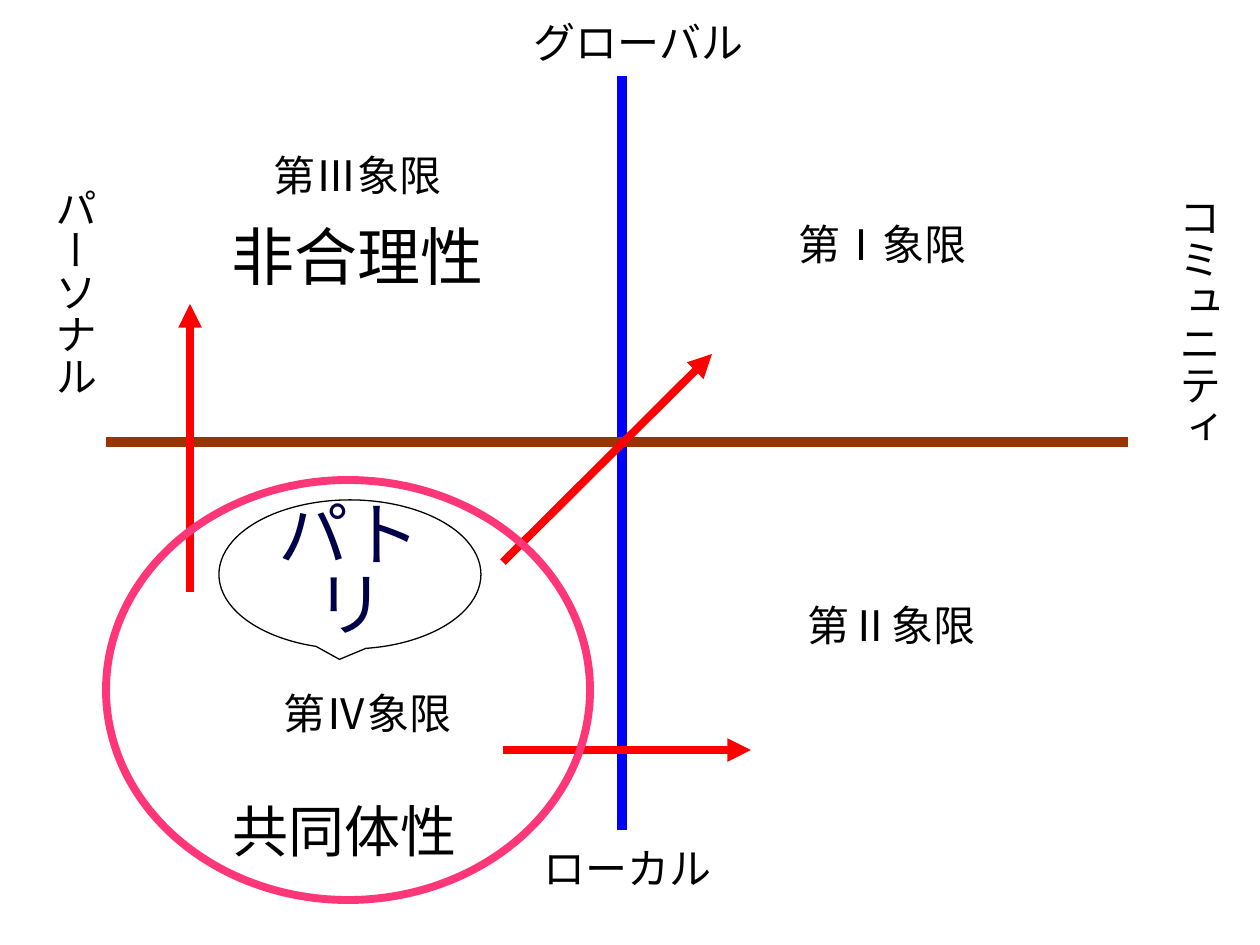
from lxml.etree import SubElement
from pptx import Presentation
from pptx.dml.color import RGBColor
from pptx.enum.shapes import MSO_CONNECTOR as Connector, MSO_SHAPE as Shape
from pptx.enum.text import MSO_ANCHOR as Anchor, PP_ALIGN as Align
from pptx.oxml.ns import qn
from pptx.util import Emu, Pt

FONT = "Noto Sans CJK JP"


def px(length):
    return Emu(round(length * 914400 / 126))


def color(hex_code):
    return RGBColor.from_string(hex_code)


def write(paragraph, text, size=24, ink="000000", align=Align.CENTER, spacing=None, before=None):
    paragraph.alignment = align
    if spacing:
        paragraph.line_spacing = spacing
    if before:
        paragraph.space_before = Pt(before)
    run = paragraph.add_run()
    run.text = text
    run.font.size = Pt(size)
    run.font.name = FONT
    run.font.color.rgb = color(ink)
    properties = run.font._element
    SubElement(properties, qn("a:ea")).set("typeface", FONT)


class Diagram:
    def __init__(self, slide):
        self.shapes = slide.shapes

    def line(self, start, end, ink, width, arrow=False):
        connector = self.shapes.add_connector(Connector.STRAIGHT, *map(px, start + end))
        connector.line.color.rgb = color(ink)
        connector.line.width = Pt(width)
        if arrow:
            SubElement(connector.line._get_or_add_ln(), qn("a:tailEnd")).set("type", "triangle")
        SubElement(connector._element.spPr, qn("a:effectLst"))

    def outline(self, kind, box, ink=None, width=1):
        shape = self.shapes.add_shape(kind, *map(px, box))
        shape.shadow.inherit = False
        shape.fill.background()
        if ink:
            shape.line.color.rgb = color(ink)
            shape.line.width = Pt(width)
        else:
            shape.line.fill.background()
        return shape

    def quadrant(self, box, name, theme=None, anchor=Anchor.MIDDLE):
        frame = self.outline(Shape.OVAL, box).text_frame
        frame.margin_top = frame.margin_bottom = 0
        frame.vertical_anchor = anchor
        write(frame.paragraphs[0], name)
        if theme:
            write(frame.add_paragraph(), theme, size=36, before=10)

    def label(self, box, text, vertical=False, **style):
        frame = self.shapes.add_textbox(*map(px, box)).text_frame
        frame.word_wrap = True
        if vertical:
            frame._txBody.bodyPr.set("vert", "eaVert")
            style["align"] = Align.LEFT
        write(frame.paragraphs[0], text, **style)

    def callout(self, box, tip, text, **style):
        bubble = self.outline(Shape.OVAL_CALLOUT, box, "000000", 0.75)
        bubble.adjustments[0], bubble.adjustments[1] = tip
        bubble.text_frame.word_wrap = True
        bubble.text_frame.vertical_anchor = Anchor.MIDDLE
        write(bubble.text_frame.paragraphs[0], text, **style)


def main():
    deck = Presentation()
    deck.slide_width, deck.slide_height = px(1260), px(945)
    diagram = Diagram(deck.slides.add_slide(deck.slide_layouts[6]))

    diagram.line((622, 830), (622, 76), "0000FF", 6)
    diagram.line((106, 442), (1128, 442), "993300", 6)

    diagram.quadrant((661, 99, 444, 290), "第Ⅰ象限")
    diagram.quadrant((146, 490, 444, 290), "第Ⅳ象限", anchor=Anchor.BOTTOM)
    diagram.quadrant((670, 480, 444, 290), "第Ⅱ象限")
    diagram.quadrant((136, 107, 444, 290), "第Ⅲ象限", "非合理性", Anchor.TOP)

    diagram.label((326, 16, 625, 58), "グローバル", spacing=0.9)
    diagram.label((315, 842, 625, 58), "ローカル", spacing=0.9)
    diagram.label((1153, 184, 72, 586), "コミュニティ", vertical=True, spacing=0.9)
    diagram.label((29, 175, 72, 572), "パーソナル", vertical=True, spacing=0.9)
    diagram.label((88, 790, 514, 79), "共同体性", size=32)

    for start, end in (
        ((190, 592), (190, 304)),
        ((503, 562), (712, 354)),
        ((503, 750), (751, 750)),
    ):
        diagram.line(start, end, "FF0000", 4.5, arrow=True)

    diagram.outline(Shape.OVAL, (106, 480, 484, 420), "FF3779", 4.5)
    diagram.callout((219, 500, 262, 149), (-0.04, 0.57), "パトリ", size=40, ink="00004A", spacing=0.83)

    deck.save("out.pptx")


if __name__ == "__main__":
    main()
